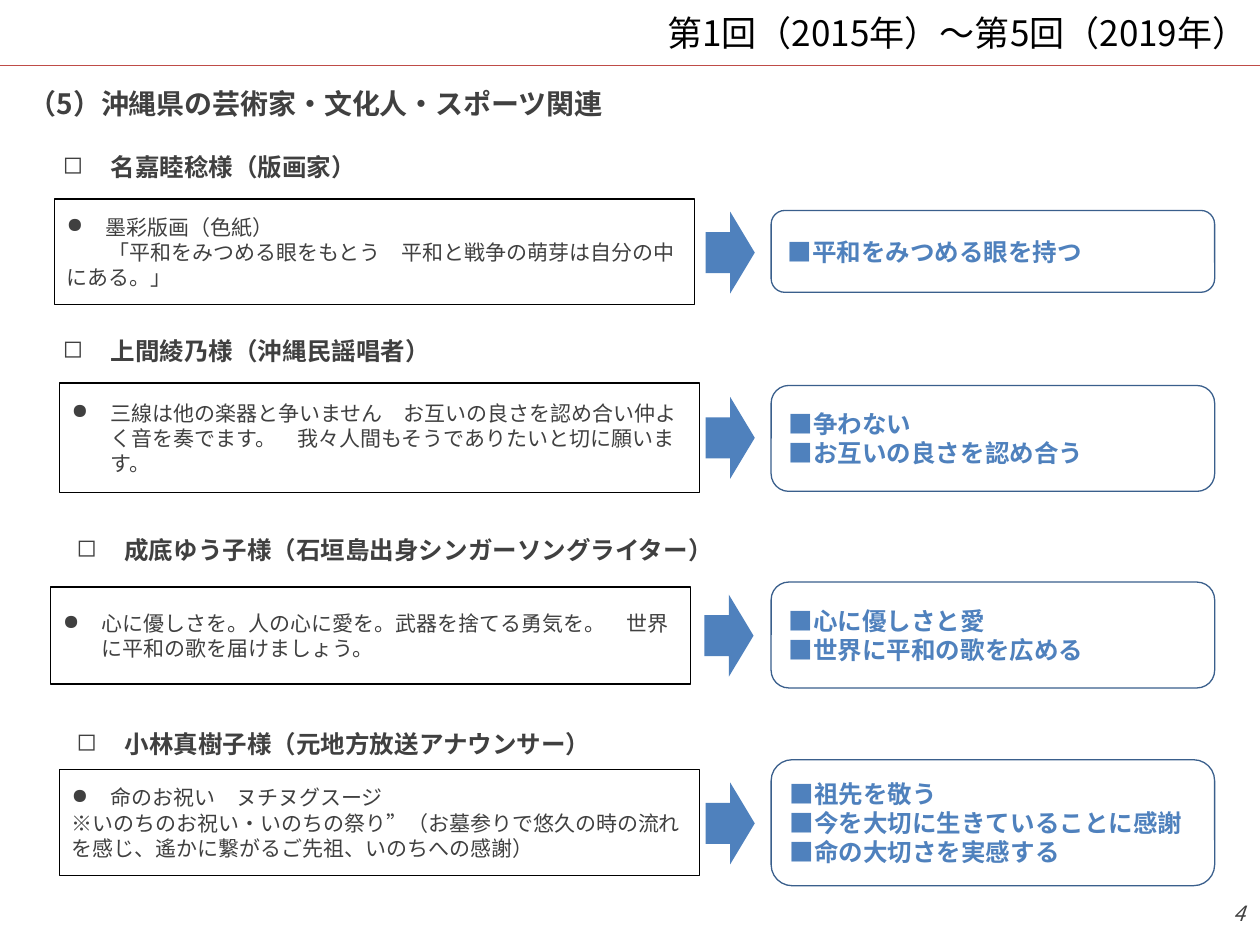
from lxml import etree
from pptx import Presentation
from pptx import util as u
from pptx.dml.color import RGBColor
from pptx.enum import shapes, text
from pptx.oxml import ns

PX = 9144  # EMU per px, 100 px to the inch
FONT = "Noto Sans CJK JP"
BLACK = RGBColor(0x00, 0x00, 0x00)
GRAY = RGBColor(0x40, 0x40, 0x40)
BLUE = RGBColor(0x4F, 0x81, 0xBD)
NAVY = RGBColor(0x3A, 0x5F, 0x8C)
RED = RGBColor(0xBF, 0x4C, 0x48)
LEFT, RIGHT = text.PP_ALIGN.LEFT, text.PP_ALIGN.RIGHT

prs = Presentation()
prs.slide_width, prs.slide_height = 1000 * PX, 750 * PX
slide = prs.slides.add_slide(prs.slide_layouts[6])


def write(holder, lines, size, color, bold=False, italic=False, align=LEFT,
          bullet=None, indent=0, before=0, middle=False):
    """Fill a shape with paragraphs; a bullet goes on the first one."""
    frame = holder.text_frame
    frame.word_wrap = True
    frame.vertical_anchor = text.MSO_ANCHOR.MIDDLE if middle else text.MSO_ANCHOR.TOP
    for i, line in enumerate(lines):
        para = frame.paragraphs[0] if i == 0 else frame.add_paragraph()
        para.alignment = align
        para.space_before = u.Pt(before)
        if bullet and i == 0:
            props = para._p.get_or_add_pPr()
            props.set("marL", str(indent * PX))
            props.set("indent", str(-indent * PX))
            etree.SubElement(props, ns.qn("a:buChar")).set("char", bullet)
        run = para.add_run()
        run.text = line
        font = run.font
        font.size, font.bold, font.italic = u.Pt(size), bold, italic
        font.color.rgb = color
        font.name = FONT
        etree.SubElement(run._r.get_or_add_rPr(), ns.qn("a:ea")).set("typeface", FONT)


def add_box(kind, x, y, w, h, fill=None, line=None):
    box = slide.shapes.add_shape(kind, x * PX, y * PX, w * PX, h * PX)
    box.shadow.inherit = False
    if fill is None:
        box.fill.background()
    else:
        box.fill.solid()
        box.fill.fore_color.rgb = fill
    if line is None:
        box.line.fill.background()
    else:
        box.line.color.rgb = line
        box.line.width = u.Pt(0.75)
    return box


# Title, rule below it, section heading and page number
rule = slide.shapes.add_connector(shapes.MSO_CONNECTOR.STRAIGHT, 0, 52 * PX, 1000 * PX, 52 * PX)
rule.line.color.rgb = RED
rule.line.width = u.Pt(0.75)
etree.SubElement(rule._element.spPr, ns.qn("a:effectLst"))

title = slide.shapes.add_textbox(0, 0, 1000 * PX, 52 * PX)
write(title, ["第1回（2015年）～第5回（2019年）"], 20, BLACK, align=RIGHT, middle=True)

section = slide.shapes.add_textbox(13 * PX, 64 * PX, 524 * PX, 39 * PX)
write(section, ["（5）沖縄県の芸術家・文化人・スポーツ関連"], 16, GRAY, bold=True, before=3.2)

page = slide.shapes.add_textbox(765 * PX, 710 * PX, 233 * PX, 40 * PX)
write(page, ["4"], 12, GRAY, italic=True, align=RIGHT)

# Per person: (name, x, y, w), (message, x, y, h), (arrow x, y), (lessons, y, h)
people = [
    (("名嘉睦稔様（版画家）", 40, 116, 454),
     (["墨彩版画（色紙）",
       "　　「平和をみつめる眼をもとう　平和と戦争の萌芽は自分の中にある。」"], 43, 158, 84),
     (560, 168),
     (["■平和をみつめる眼を持つ"], 167, 65)),
    (("上間綾乃様（沖縄民謡唱者）", 40, 262, 509),
     (["三線は他の楽器と争いません　お互いの良さを認め合い仲よく音を奏でます。"
       "　我々人間もそうでありたいと切に願います。"], 47, 304, 87),
     (560, 315),
     (["■争わない", "■お互いの良さを認め合う"], 306, 84)),
    (("成底ゆう子様（石垣島出身シンガーソングライター）", 51, 420, 560),
     (["心に優しさを。人の心に愛を。武器を捨てる勇気を。"
       "　世界に平和の歌を届けましょう。"], 40, 466, 77),
     (559, 472),
     (["■心に優しさと愛", "■世界に平和の歌を広める"], 462, 84)),
    (("小林真樹子様（元地方放送アナウンサー）", 51, 574, 508),
     (["命のお祝い　ヌチヌグスージ",
       "※いのちのお祝い・いのちの祭り”（お墓参りで悠久の時の流れを感じ、"
       "遙かに繋がるご先祖、いのちへの感謝）"], 47, 611, 84),
     (560, 621),
     (["■祖先を敬う", "■今を大切に生きていることに感謝", "■命の大切さを実感する"], 603, 100)),
]

for (name, name_x, name_y, name_w), (message, msg_x, msg_y, msg_h), arrow, lesson in people:
    heading = slide.shapes.add_textbox(name_x * PX, name_y * PX, name_w * PX, 39 * PX)
    write(heading, [name], 14, GRAY, bold=True, bullet="◻", indent=38, before=2.8)

    quote = add_box(shapes.MSO_SHAPE.RECTANGLE, msg_x, msg_y, 508, msg_h, line=BLACK)
    write(quote, message, 12, GRAY, bullet="●", indent=31, middle=True)

    add_box(shapes.MSO_SHAPE.RIGHT_ARROW, *arrow, 39, 65, fill=BLUE)

    points, lesson_y, lesson_h = lesson
    summary = add_box(shapes.MSO_SHAPE.ROUNDED_RECTANGLE, 612, lesson_y, 352, lesson_h, line=NAVY)
    write(summary, points, 14, BLUE, bold=True, middle=True)

prs.save("out.pptx")
